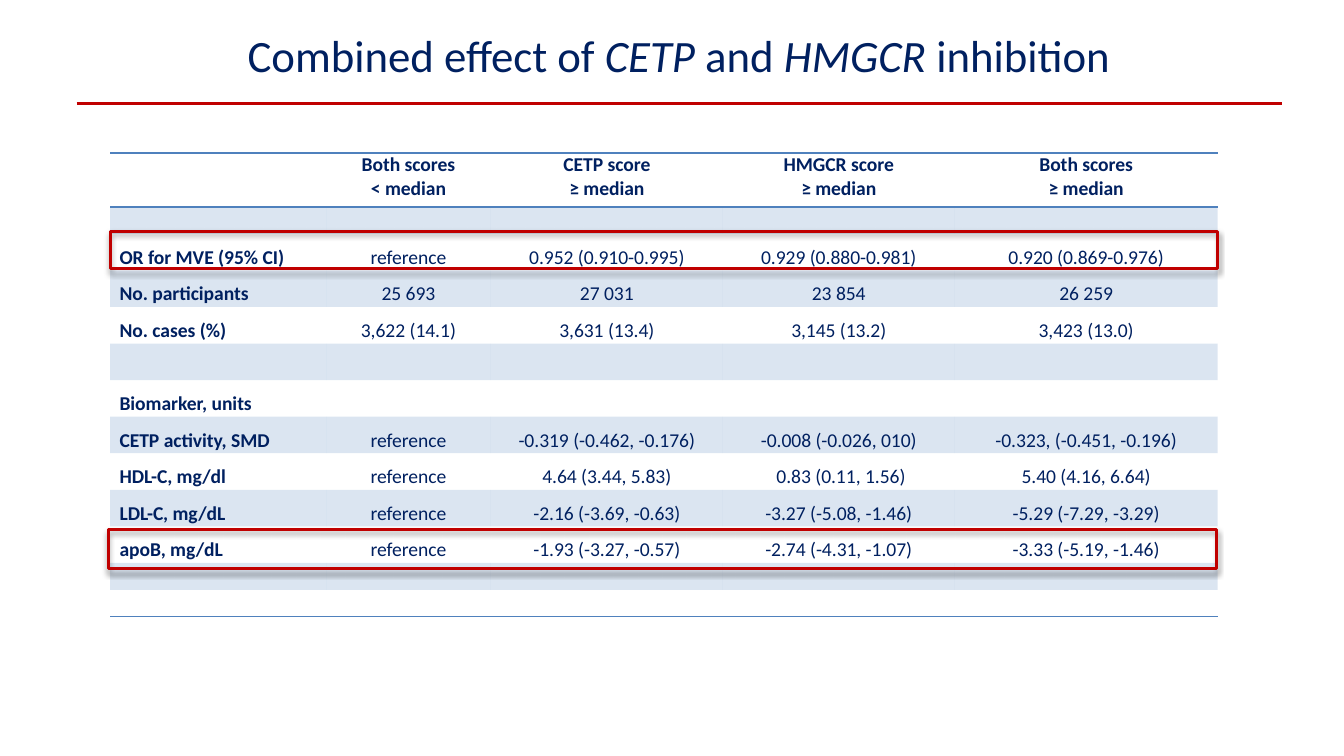
import pptx
import pptx.util
import pptx.dml.color
import pptx.enum.shapes
import pptx.enum.text
import pptx.oxml
import pptx.oxml.ns
from lxml import etree

Inches, Pt = pptx.util.Inches, pptx.util.Pt
ALIGN = pptx.enum.text.PP_ALIGN
qn = pptx.oxml.ns.qn

COLORS = {"navy": "002060", "blue": "4F81BD", "red": "C00000", "shadow": "000000"}
NO_STYLE = "{2D5ABB26-0587-4C30-8999-92F81FD0307C}"

TABLE_WIDTH, TABLE_HEIGHT = 8.24, 3.45
COL_SHARES = [1.61, 1.23, 1.73, 1.73, 1.96]
COL_WIDTHS = [TABLE_WIDTH * share / sum(COL_SHARES) for share in COL_SHARES]
HEAD_HEIGHT, GAP_HEIGHT = 0.4, 0.2
BODY_HEIGHT = (TABLE_HEIGHT - HEAD_HEIGHT - 3 * GAP_HEIGHT) / 9
ROW_HEIGHTS = [HEAD_HEIGHT, GAP_HEIGHT] + [BODY_HEIGHT] * 9 + [GAP_HEIGHT] * 2
ROWS = [
    ["", "Both scores\n< median", "CETP score\n≥ median",
     "HMGCR score\n≥ median", "Both scores\n≥ median"],
    [],
    ["OR for MVE (95% CI)", "reference", "0.952 (0.910-0.995)",
     "0.929 (0.880-0.981)", "0.920 (0.869-0.976)"],
    ["No. participants", "25 693", "27 031", "23 854", "26 259"],
    ["No. cases (%)", "3,622 (14.1)", "3,631 (13.4)", "3,145 (13.2)", "3,423 (13.0)"],
    [],
    ["Biomarker, units"],
    ["CETP activity, SMD", "reference", "-0.319 (-0.462, -0.176)",
     "-0.008 (-0.026, 010)", "-0.323, (-0.451, -0.196)"],
    ["HDL-C, mg/dl", "reference", "4.64 (3.44, 5.83)",
     " 0.83 (0.11, 1.56)", "5.40 (4.16, 6.64)"],
    ["LDL-C, mg/dL", "reference", "-2.16 (-3.69, -0.63)",
     "-3.27 (-5.08, -1.46)", "-5.29 (-7.29, -3.29)"],
    ["apoB, mg/dL", "reference", "-1.93 (-3.27, -0.57)",
     "-2.74 (-4.31, -1.07)", "-3.33 (-5.19, -1.46)"],
    [],
    [],
]


def rgb(name):
    return pptx.dml.color.RGBColor.from_string(COLORS[name])


def add_run(p, text, size, **formats):
    r = p.add_run()
    r.text = text
    r.font.color.rgb = rgb("navy")
    for key, value in {"name": "Calibri", "size": Pt(size), **formats}.items():
        setattr(r.font, key, value)


def add_title(s):
    tb = s.shapes.add_textbox(Inches(0.57), Inches(0.11), Inches(8.96), Inches(0.59))
    tf = tb.text_frame
    tf.word_wrap = True
    tf.vertical_anchor = pptx.enum.text.MSO_ANCHOR.MIDDLE
    p = tf.paragraphs[0]
    p.alignment = ALIGN.CENTER
    parts = ["Combined effect of ", "CETP ", "and ", "HMGCR", " inhibition"]
    for i, text in enumerate(parts):
        add_run(p, text, 24, italic=i % 2 == 1)


def add_rule(s):
    line = s.shapes.add_connector(pptx.enum.shapes.MSO_CONNECTOR.STRAIGHT,
                                  Inches(0.57), Inches(0.77), Inches(9.54), Inches(0.77))
    line.line.color.rgb = rgb("red")
    line.line.width = Pt(1.75)
    etree.SubElement(line._element.spPr, qn("a:effectLst"))


def fill_cell(cell, banded):
    if not banded:
        cell.fill.background()
        return
    cell.fill.solid()
    cell.fill.fore_color.rgb = rgb("blue")
    color = cell._tc.tcPr.find(".//" + qn("a:srgbClr"))
    etree.SubElement(color, qn("a:alpha"), val="20000")


def set_borders(cell, sides):
    # Borders come before the fill in the cell properties
    for i, side in enumerate(sides):
        ln = etree.Element(qn("a:ln" + side), w=str(Pt(1)))
        fill = etree.SubElement(ln, qn("a:solidFill"))
        etree.SubElement(fill, qn("a:srgbClr"), val=COLORS["blue"])
        cell._tc.tcPr.insert(i, ln)


def write_cell(cell, text, header, label):
    margins = {"margin_left": 0.07, "margin_right": 0.07, "margin_top": 0, "margin_bottom": 0}
    for key, value in margins.items():
        setattr(cell, key, Inches(value))
    tf = cell.text_frame
    if not text:
        # Small end mark keeps empty rows low
        etree.SubElement(tf.paragraphs[0]._p, qn("a:endParaRPr"), sz="1050")
        return
    for i, line in enumerate(text.split("\n")):
        p = tf.add_paragraph() if i else tf.paragraphs[0]
        p.alignment = ALIGN.LEFT if label else ALIGN.CENTER
        if not header:
            p.line_spacing = 1.5
        add_run(p, line, 10.5, bold=header or label)


def add_score_table(s):
    frame = s.shapes.add_table(len(ROWS), len(COL_WIDTHS), Inches(0.82), Inches(1.14),
                               Inches(TABLE_WIDTH), Inches(TABLE_HEIGHT))
    table = frame.table
    table.first_row = table.horz_banding = False
    table._tbl.tblPr.find(qn("a:tableStyleId")).text = NO_STYLE
    for column, width in zip(table.columns, COL_WIDTHS):
        column.width = Inches(width)
    for i, (row, height) in enumerate(zip(table.rows, ROW_HEIGHTS)):
        row.height = Inches(height)
        texts = ROWS[i] + [""] * (len(COL_WIDTHS) - len(ROWS[i]))
        sides = {0: "TB", len(ROWS) - 1: "B"}.get(i, "")
        for j, (cell, text) in enumerate(zip(row.cells, texts)):
            write_cell(cell, text, i == 0, j == 0)
            fill_cell(cell, i % 2 == 1)
            set_borders(cell, sides)


def add_highlight(s, left, top, height):
    sp = s.shapes.add_shape(pptx.enum.shapes.MSO_SHAPE.RECTANGLE,
                            Inches(left), Inches(top), Inches(TABLE_WIDTH), Inches(height))
    sp.fill.background()
    sp.line.color.rgb = rgb("red")
    sp.line.width = Pt(1.5)
    sp.shadow.inherit = False
    effects = sp._element.spPr.find(qn("a:effectLst"))
    shadow = etree.SubElement(effects, qn("a:outerShdw"), blurRad=str(Pt(3.1)),
                              dist=str(Pt(1.8)), dir="5400000", rotWithShape="0")
    color = etree.SubElement(shadow, qn("a:srgbClr"), val=COLORS["shadow"])
    etree.SubElement(color, qn("a:alpha"), val="35000")


def main():
    prs = pptx.Presentation()
    # Widescreen, 16:9
    prs.slide_width, prs.slide_height = Inches(10), Inches(10 * 9 / 16)
    s = prs.slides.add_slide(prs.slide_layouts[6])

    # Table of scores
    add_score_table(s)

    # Heading with rule
    add_rule(s)
    add_title(s)

    # Frames around the key rows
    add_highlight(s, 0.81, 3.94, 0.29)
    add_highlight(s, 0.82, 1.72, 0.28)

    prs.save("out.pptx")


if __name__ == "__main__":
    main()
